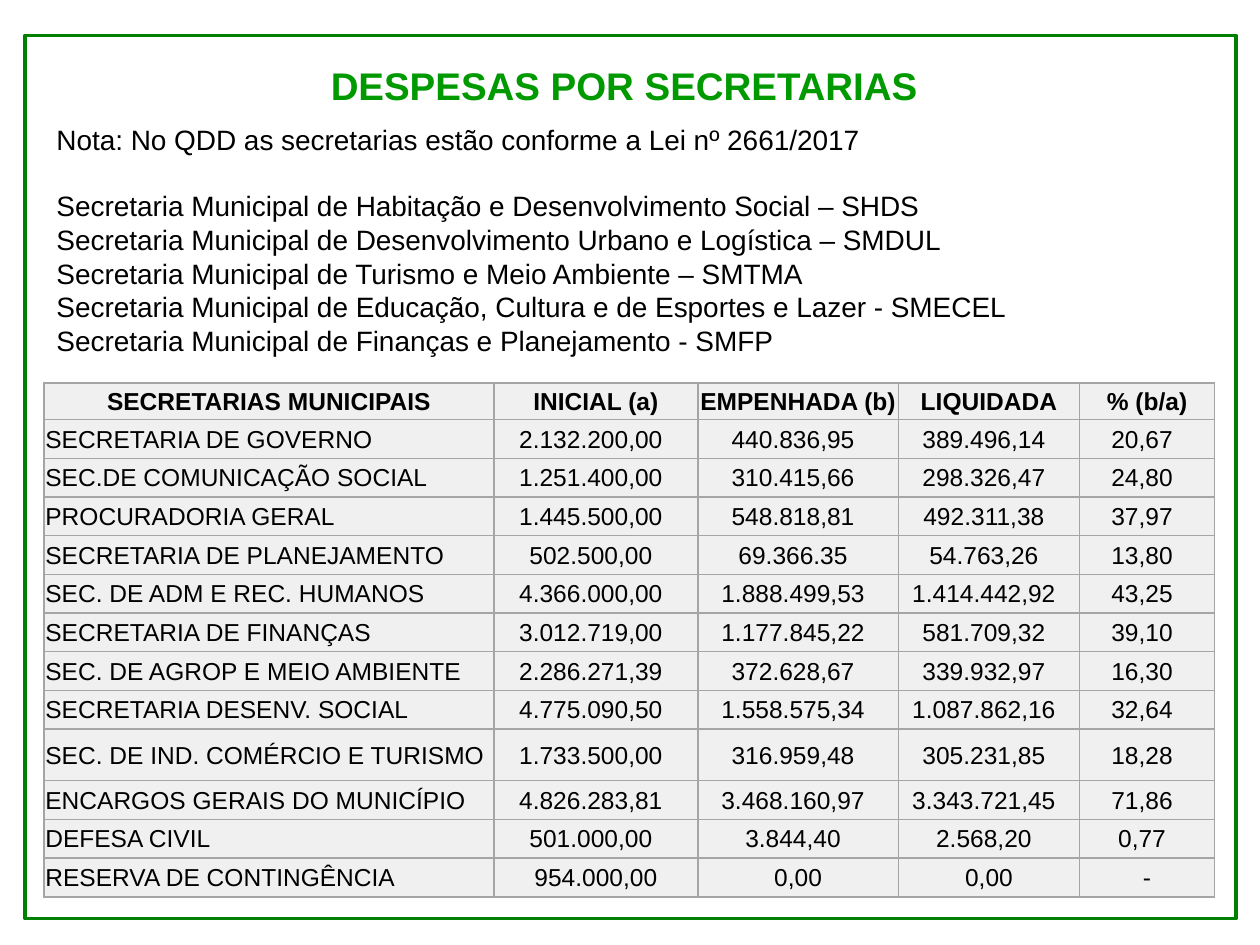
from lxml import etree
from pptx import Presentation
from pptx import util as u
from pptx.dml.color import RGBColor
from pptx.enum import shapes, text
from pptx.oxml.ns import qn

# Content
TITLE = "DESPESAS POR SECRETARIAS "
NOTE = "Nota: No QDD as secretarias estão conforme a Lei nº 2661/2017"
DEPARTMENTS = [
    "Secretaria Municipal de Habitação e Desenvolvimento Social – SHDS",
    "Secretaria Municipal de Desenvolvimento Urbano e Logística – SMDUL",
    "Secretaria Municipal de Turismo e Meio Ambiente – SMTMA",
    "Secretaria Municipal de Educação, Cultura e de Esportes e Lazer - SMECEL",
    "Secretaria Municipal de Finanças e Planejamento - SMFP",
]
EXPENSES = [
    ("SECRETARIAS MUNICIPAIS", "INICIAL (a)", "EMPENHADA (b)", "LIQUIDADA", "% (b/a)"),
    ("SECRETARIA DE GOVERNO", "2.132.200,00", "440.836,95", "389.496,14", "20,67"),
    ("SEC.DE COMUNICAÇÃO SOCIAL", "1.251.400,00", "310.415,66", "298.326,47", "24,80"),
    ("PROCURADORIA GERAL", "1.445.500,00", "548.818,81", "492.311,38", "37,97"),
    ("SECRETARIA DE PLANEJAMENTO", "502.500,00", "69.366.35", "54.763,26", "13,80"),
    ("SEC. DE ADM E REC. HUMANOS", "4.366.000,00", "1.888.499,53", "1.414.442,92", "43,25"),
    ("SECRETARIA DE FINANÇAS", "3.012.719,00", "1.177.845,22", "581.709,32", "39,10"),
    ("SEC. DE AGROP E MEIO AMBIENTE", "2.286.271,39", "372.628,67", "339.932,97", "16,30"),
    ("SECRETARIA DESENV. SOCIAL", "4.775.090,50", "1.558.575,34", "1.087.862,16", "32,64"),
    ("SEC. DE IND. COMÉRCIO E TURISMO", "1.733.500,00", "316.959,48", "305.231,85", "18,28"),
    ("ENCARGOS GERAIS DO MUNICÍPIO", "4.826.283,81", "3.468.160,97", "3.343.721,45", "71,86"),
    ("DEFESA CIVIL", "501.000,00", "3.844,40", "2.568,20", "0,77"),
    ("RESERVA DE CONTINGÊNCIA", "954.000,00", "0,00", "0,00", "-"),
]
COL_WIDTHS = [3.57, 1.62, 1.59, 1.44, 1.07]
TABLE_HEIGHT = 4.08
SPECIAL_ROWS = {0: 0.29, 9: 0.41}
LEFT, CENTER = text.PP_ALIGN.LEFT, text.PP_ALIGN.CENTER


def color(value):
    return RGBColor.from_string(value)


def box(*lengths):
    return [u.Inches(n) for n in lengths]


def write(p, words, size, hue="000000", bold=False, align=LEFT):
    p.alignment = align
    r = p.add_run()
    r.text = words
    r.font.color.rgb = color(hue)
    for name, value in {"name": "Arial", "size": u.Pt(size), "bold": bold}.items():
        setattr(r.font, name, value)


def add_borders(cell, hue, width):
    tc_pr = cell._tc.get_or_add_tcPr()
    for i, side in enumerate(("lnL", "lnR", "lnT", "lnB")):
        line = etree.Element(qn(f"a:{side}"), w=str(u.Pt(width)))
        fill = etree.SubElement(line, qn("a:solidFill"))
        etree.SubElement(fill, qn("a:srgbClr"), val=hue)
        tc_pr.insert(i, line)


prs = Presentation()
prs.slide_width, prs.slide_height = box(10, 7.5)
s = prs.slides.add_slide(prs.slide_layouts[5])

# Frame
frame = s.shapes.add_shape(shapes.MSO_SHAPE.RECTANGLE, *box(0.2, 0.28, 9.61, 7.01))
frame.shadow.inherit = False
frame.fill.background()
frame.line.color.rgb = color("008000")
frame.line.width = u.Pt(2)

# Title
title = s.shapes.title
title.left, title.top, title.width, title.height = box(0.94, 0.44, 8.11, 0.47)
tf = title.text_frame
tf.auto_size = text.MSO_AUTO_SIZE.NONE
tf.vertical_anchor = text.MSO_ANCHOR.TOP
write(tf.paragraphs[0], TITLE, 22, "009900", True, CENTER)

# Expense table
n_rows, n_cols = len(EXPENSES), len(COL_WIDTHS)
table = s.shapes.add_table(n_rows, n_cols,
                           *box(0.35, 3.04, sum(COL_WIDTHS), TABLE_HEIGHT)).table
table.first_row = table.horz_banding = False
row_height = (TABLE_HEIGHT - sum(SPECIAL_ROWS.values())) / (n_rows - len(SPECIAL_ROWS))
for col, width in zip(table.columns, COL_WIDTHS):
    col.width = u.Inches(width)
for i, values in enumerate(EXPENSES):
    table.rows[i].height = u.Inches(SPECIAL_ROWS.get(i, row_height))
    is_header, is_last = i == 0, i == n_rows - 1
    for j, value in enumerate(values):
        cell = table.cell(i, j)
        is_plain = is_header or is_last or j == 0
        margins = {"left": 0.01, "top": 0.01, "right": 0.01 if is_plain else 0.09, "bottom": 0}
        for side, margin in margins.items():
            setattr(cell, f"margin_{side}", u.Inches(margin))
        cell.vertical_anchor = text.MSO_ANCHOR.MIDDLE
        cell.fill.solid()
        cell.fill.fore_color.rgb = color("F0F0F0")
        add_borders(cell, "A5A5A5", 1)
        write(cell.text_frame.paragraphs[0], value, 14, bold=is_header,
              align=CENTER if is_header or j else LEFT)

# Note and list of departments
tf = s.shapes.add_textbox(*box(0.35, 0.92, 8.43, 1.99)).text_frame
tf.word_wrap = True
for i, words in enumerate([NOTE] + DEPARTMENTS):
    p = tf.add_paragraph() if i else tf.paragraphs[0]
    write(p, words, 16)
tf.paragraphs[0].space_after = u.Pt(19)

prs.save("out.pptx")
